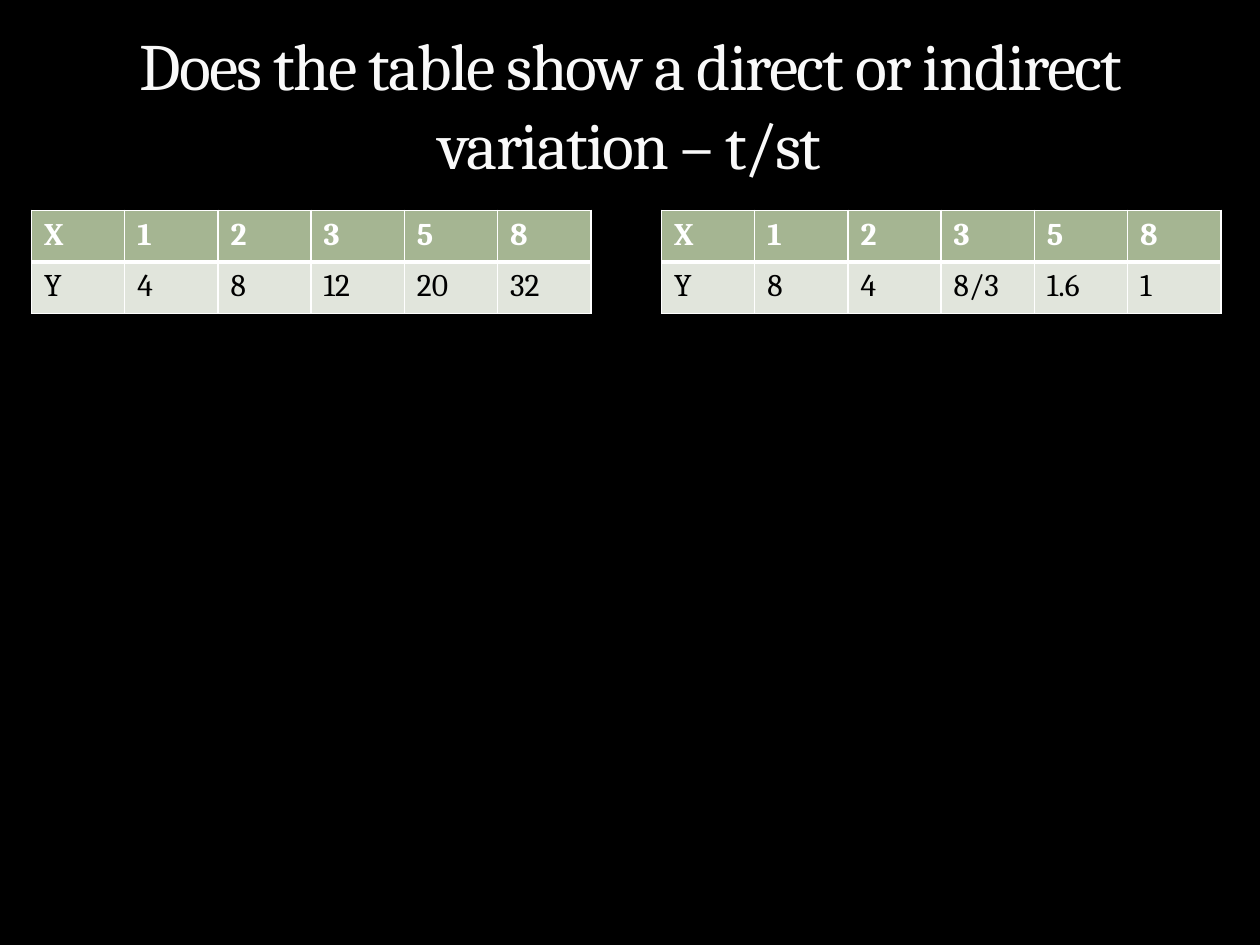
import pptx
import pptx.dml.color
import pptx.enum.text
import pptx.oxml
import pptx.oxml.ns
import pptx.util

Inches = pptx.util.Inches
Pt = pptx.util.Pt
RGBColor = pptx.dml.color.RGBColor

BLACK = RGBColor(0x00, 0x00, 0x00)
WHITE = RGBColor(0xFF, 0xFF, 0xFF)
TITLE_WHITE = RGBColor(0xF9, 0xF9, 0xF9)
SAGE = RGBColor(0xA5, 0xB5, 0x92)
PALE_SAGE = RGBColor(0xE1, 0xE5, 0xDC)

X_VALUES = ["X", "1", "2", "3", "5", "8"]
DIRECT_VALUES = ["Y", "4", "8", "12", "20", "32"]
INDIRECT_VALUES = ["Y", "8", "4", "8/3", "1.6", "1"]


class VariationPage:
    font_name = "Cambria"
    header_format = {"size": Pt(18), "bold": True}
    value_format = {"size": Pt(18), "bold": False}
    title_format = {"size": Pt(37.8), "bold": False}

    def __init__(self, deck):
        self.page = deck.slides.add_slide(deck.slide_layouts[6])
        fill = self.page.background.fill
        fill.solid()
        fill.fore_color.rgb = BLACK

    def add_text(self, frame, text, color, formats):
        para = frame.paragraphs[0]
        span = para.add_run()
        span.text = text
        for name, value in formats.items():
            setattr(span.font, name, value)
        span.font.name = self.font_name
        span.font.color.rgb = color
        return para, span

    def title(self, text, left, top, width, height):
        box = self.page.shapes.add_textbox(
            Inches(left), Inches(top), Inches(width), Inches(height))
        frame = box.text_frame
        frame.word_wrap = True
        frame.vertical_anchor = pptx.enum.text.MSO_ANCHOR.BOTTOM
        para, span = self.add_text(frame, text, TITLE_WHITE, self.title_format)
        para.alignment = pptx.enum.text.PP_ALIGN.CENTER
        span._r.get_or_add_rPr().set("spc", "-100")

    def border(self, cell, side, points):
        line = pptx.oxml.parse_xml(
            f'<a:ln{side} {pptx.oxml.ns.nsdecls("a")} w="{Pt(points)}">'
            f'<a:solidFill><a:srgbClr val="{WHITE}"/></a:solidFill></a:ln{side}>')
        cell._tc.get_or_add_tcPr().append(line)

    def table(self, rows, left, top, column_width=0.74, row_height=0.41):
        columns = len(rows[0])
        table = self.page.shapes.add_table(
            len(rows), columns, Inches(left), Inches(top),
            Inches(column_width * columns), Inches(row_height * len(rows))).table
        styles = [(SAGE, WHITE, self.header_format, {"T": 1, "B": 3}),
                  (PALE_SAGE, BLACK, self.value_format, {"T": 3, "B": 1})]
        for row, (values, style) in enumerate(zip(rows, styles)):
            fill_color, text_color, formats, edges = style
            for column, value in enumerate(values):
                cell = table.cell(row, column)
                for side, points in {"L": 1, "R": 1, **edges}.items():
                    self.border(cell, side, points)
                cell.fill.solid()
                cell.fill.fore_color.rgb = fill_color
                self.add_text(cell.text_frame, value, text_color, formats)


def main():
    deck = pptx.Presentation()
    deck.slide_width = Inches(10)
    deck.slide_height = Inches(7.5)
    page = VariationPage(deck)
    page.title("Does the table show a direct or indirect variation – t/st",
               0.5, 0.17, 9, 1.33)
    for left, y_values in [(0.25, DIRECT_VALUES), (5.25, INDIRECT_VALUES)]:
        page.table([X_VALUES, y_values], left, 1.67)
    deck.save("out.pptx")


if __name__ == "__main__":
    main()
